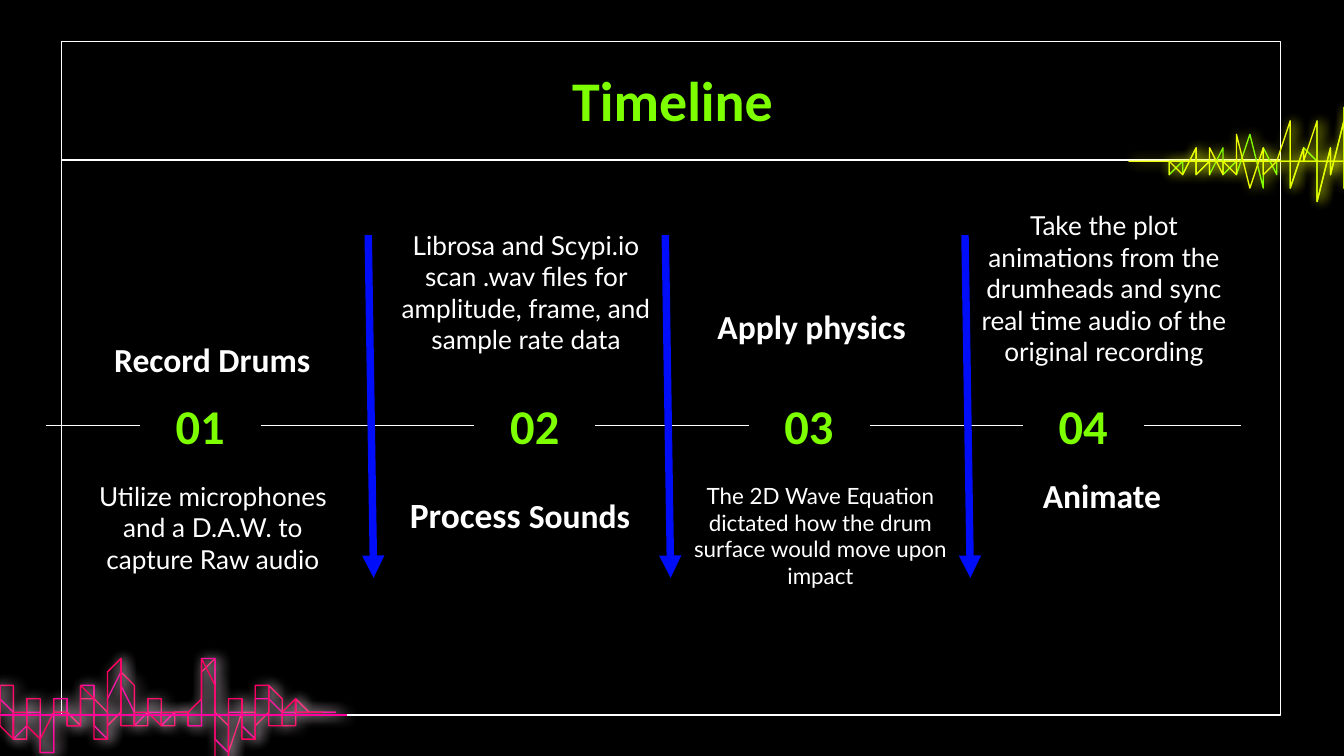
from dataclasses import dataclass

from lxml.etree import SubElement
from pptx import Presentation
from pptx.dml.color import RGBColor
from pptx.enum.shapes import MSO_CONNECTOR, MSO_SHAPE
from pptx.enum.text import MSO_ANCHOR, PP_ALIGN
from pptx.oxml.ns import qn
from pptx.util import Emu, Inches, Pt


@dataclass(frozen=True)
class Theme:
    back: str = "000000"
    text: str = "FFFFFF"
    accent: str = "7DFF00"
    arrow: str = "000DF9"
    rose: str = "FF0062"
    pink: str = "FF009E"
    yellow: str = "EDFF00"
    rose_glow: str = "FFEBF8"
    head_font: str = "Calibri"
    body_font: str = "Lato"
    title_size: float = 30
    number_size: float = 26
    head_size: float = 18
    hairline: float = 0.75
    wave_line: float = 0.7
    arrow_line: float = 4


T = Theme()
COL = Inches(0.1)  # grid unit: a hundredth of the slide's width
WIDTH, HEIGHT = 100, 56.25
LEFT, RIGHT, TOP, BOTTOM = 4.6, 95.3, 3.1, 53.2  # frame
RULE_Y, AXIS_Y = 11.9, 31.65
NUMBER_W, NUMBER_H, HEAD_W, BODY_W, TEXT_H = 9, 6.5, 24.6, 21.7, 5.3

# Number left; heading left, top and sized runs; body left, top, size and text
STAGES = [
    (10.4, (3.5, 24.1, [("Record Drums", T.head_size)]),
     (5, 36.6, 14, "Utilize microphones and a D.A.W. to capture Raw audio")),
    (35.3, (26.4, 35.6, [("Process ", 19), ("Sounds", T.head_size)]),
     (28.3, 19.1, 14, "Librosa and Scypi.io scan .wav files for amplitude, "
                      "frame, and sample rate data")),
    (55.7, (48.1, 21.6, [("Apply physics", T.head_size)]),
     (50.2, 37.2, 12, "The 2D Wave Equation dictated how the drum surface "
                      "would move upon impact")),
    (76.1, (69.7, 34.2, [("Animate", T.head_size)]),
     (71.3, 18.8, 14, "Take the plot animations from the drumheads and sync "
                      "real time audio of the original recording")),
]
ARROWS_X = [27.4, 49.5, 71.8]

# Smooth wave: two control points, then the x where it meets the baseline
SMOOTH_START = -0.4
SMOOTH = [
    (-.2, 51.7, .5, 48.7, .9), (1.3, 57.7, 2.1, 53.2, 2.1),
    (2.1, 53.2, 2.5, 51.5, 2.9), (3.3, 54.8, 3.6, 59.6, 4.3),
    (4.3, 53.2, 4.6, 51.4, 5.3), (6, 54.9, 6.2, 53.2, 6.3),
    (6.3, 53.2, 6.9, 48.1, 7.5), (7.5, 53.2, 8, 57.5, 8.6),
    (9.2, 48.9, 9.2, 46.4, 9.9), (9.9, 53.2, 10.3, 54.6, 10.9),
    (11.5, 51.7, 11.9, 52.8, 11.9), (11.9, 53.5, 12.7, 54.3, 12.9),
    (13.2, 52, 14, 52.6, 14.2), (14.4, 53.8, 15, 54, 15),
    (15.1, 52.4, 15.9, 44.1, 16.5), (16.5, 53.2, 17.1, 61.6, 17.7),
    (17.7, 53.2, 18, 51.2, 18.5), (18.5, 53.2, 19.2, 57.4, 19.6),
    (19.6, 53.2, 20.3, 47.6, 20.9), (20.9, 53.2, 21.2, 54.7, 21.7),
    (22.2, 51.7, 22.7, 52.8, 23), (23.3, 53.6, 23.6, 53.4, 23.9),
    (24.2, 52.9, 24.5, 52.7, 25.1),
]
# Jagged wave: the corners from left to right
JAGGED = [
    (86.9, 11.9), (87.4, 12.9), (87.7, 11.7), (88.4, 13.1), (88.9, 10.8),
    (89.3, 13.1), (89.8, 11.9), (90.2, 12.8), (90.8, 11.2), (91.2, 12.9),
    (91.7, 11.9), (92.2, 12.9), (92.7, 10), (93.6, 13.7), (94.1, 10.7),
    (94.6, 13.1), (95.1, 11.6), (95.6, 12.5), (96.2, 9.3), (96.5, 13.9),
    (97.1, 11.2), (97.6, 12.1), (98, 8.9), (98.5, 14.9), (98.9, 11),
    (99.4, 12.7), (99.8, 9.2), (100, 14.2), (100.5, 7.6), (100.9, 15.3),
]


def grid(*values):
    return [Emu(round(v * COL)) for v in values]


def set_effects(s, glow=None):
    """Drop the theme's shadow and, if asked, add a soft coloured one."""
    effects = SubElement(s._element.spPr, qn("a:effectLst"))
    if glow:
        shadow = SubElement(effects, qn("a:outerShdw"), blurRad=str(Pt(6.8)),
                            dist=str(Pt(1.5)), dir="0", algn="bl", rotWithShape="0")
        SubElement(shadow, qn("a:srgbClr"), val=glow)


def set_line(s, color, width):
    s.line.color.rgb = RGBColor.from_string(color)
    s.line.width = Pt(width)


def add_line(sl, start, end, color=T.text, width=T.hairline, glow=None, arrow=False):
    s = sl.shapes.add_connector(MSO_CONNECTOR.STRAIGHT, *grid(*start, *end))
    set_line(s, color, width)
    if arrow:
        SubElement(s.line._get_or_add_ln(), qn("a:tailEnd"), type="triangle")
    set_effects(s, glow)
    return s


def add_wave(sl, points, color, glow, shift=0, close=False):
    points = [(x + shift, y) for x, y in points]
    builder = sl.shapes.build_freeform(*points[0], scale=float(COL))
    builder.add_line_segments(points[1:], close=close)
    s = builder.convert_to_shape()
    s.fill.background()
    set_line(s, color, T.wave_line)
    set_effects(s, glow)


def fill_text(s, runs, color, font, bold):
    """Write centred runs, each a text and its size."""
    tf = s.text_frame
    tf.word_wrap = True
    tf.vertical_anchor = MSO_ANCHOR.MIDDLE
    tf.margin_left = tf.margin_right = tf.margin_top = tf.margin_bottom = COL
    p = tf.paragraphs[0]
    p.alignment = PP_ALIGN.CENTER
    p.font.name, p.font.bold = font, bold
    p.font.color.rgb = RGBColor.from_string(color)
    p.font.size = Pt(runs[0][1])
    for text, size in runs:
        r = p.add_run()
        r.text = text
        if size != runs[0][1]:
            r.font.size = Pt(size)


def add_text(sl, box, runs, color=T.text, font=T.head_font, bold=True):
    s = sl.shapes.add_textbox(*grid(*box))
    fill_text(s, runs, color, font, bold)
    return s


def smooth_points(steps=8):
    """Sample the cubic curves of the smooth wave."""
    x0, points = SMOOTH_START, [(SMOOTH_START, BOTTOM)]
    for x1, y1, x2, y2, x3 in SMOOTH:
        for i in range(1, steps + 1):
            t = i / steps
            a, b, c, d = (1 - t) ** 3, 3 * t * (1 - t) ** 2, 3 * t * t * (1 - t), t ** 3
            points.append((a * x0 + b * x1 + c * x2 + d * x3,
                           (a + d) * BOTTOM + b * y1 + c * y2))
        x0 = x3
    return points


def add_decor(sl):
    # Frame and rule under the title
    s = sl.shapes.add_shape(MSO_SHAPE.ROUNDED_RECTANGLE,
                            *grid(LEFT, TOP, RIGHT - LEFT, BOTTOM - TOP))
    s.adjustments[0] = 0
    s.fill.background()
    set_line(s, T.text, T.hairline)
    set_effects(s)
    add_line(sl, (LEFT, RULE_Y), (RIGHT, RULE_Y))
    # Smooth wave at the lower left
    curve = smooth_points()
    for shift, color in [(0, T.rose), (-.3, T.pink), (-.6, T.rose)]:
        add_wave(sl, curve, color, T.rose_glow, shift)
    add_line(sl, (0, BOTTOM), (25.8, BOTTOM), T.pink, T.wave_line, T.rose_glow)
    # Jagged wave at the upper right
    corners = JAGGED + [(JAGGED[-1][0], RULE_Y)]
    add_wave(sl, corners, T.accent, T.yellow, close=True)
    add_wave(sl, [(84.1, RULE_Y)] + corners, T.yellow, T.yellow, -.3, close=True)


def add_stage(sl, index, number_x, heading, body):
    x, y, runs = heading
    add_text(sl, (x, y, HEAD_W, TEXT_H), runs)
    x, y, size, text = body
    add_text(sl, (x, y, BODY_W, TEXT_H), [(text, size)], font=T.body_font, bold=False)
    box = (number_x, AXIS_Y - NUMBER_H / 2, NUMBER_W, NUMBER_H)
    return add_text(sl, box, [(f"{index:02}", T.number_size)], T.accent)


def add_axis(sl, numbers):
    """Join the numbers in a row, with a loose end on both sides."""
    for before, after in zip([None] + numbers, numbers + [None]):
        s = add_line(sl, (3.4, AXIS_Y), (92.3, AXIS_Y))
        if before:
            s.begin_connect(before, 3)
        if after:
            s.end_connect(after, 1)


def main():
    prs = Presentation()
    prs.slide_width, prs.slide_height = grid(WIDTH, HEIGHT)
    sl = prs.slides.add_slide(prs.slide_layouts[5])
    sl.background.fill.solid()
    sl.background.fill.fore_color.rgb = RGBColor.from_string(T.back)
    add_decor(sl)
    # Title
    title = sl.shapes.title
    title.left, title.top, title.width, title.height = grid(7.9, 4.2, 84.3, 6.3)
    fill_text(title, [("Timeline", T.title_size)], T.accent, T.head_font, True)
    # Timeline
    numbers = [add_stage(sl, i, *stage) for i, stage in enumerate(STAGES, 1)]
    add_axis(sl, numbers)
    for x in ARROWS_X:
        add_line(sl, (x, 17.5), (x + .4, 43), T.arrow, T.arrow_line, arrow=True)
    prs.save("out.pptx")


if __name__ == "__main__":
    main()
